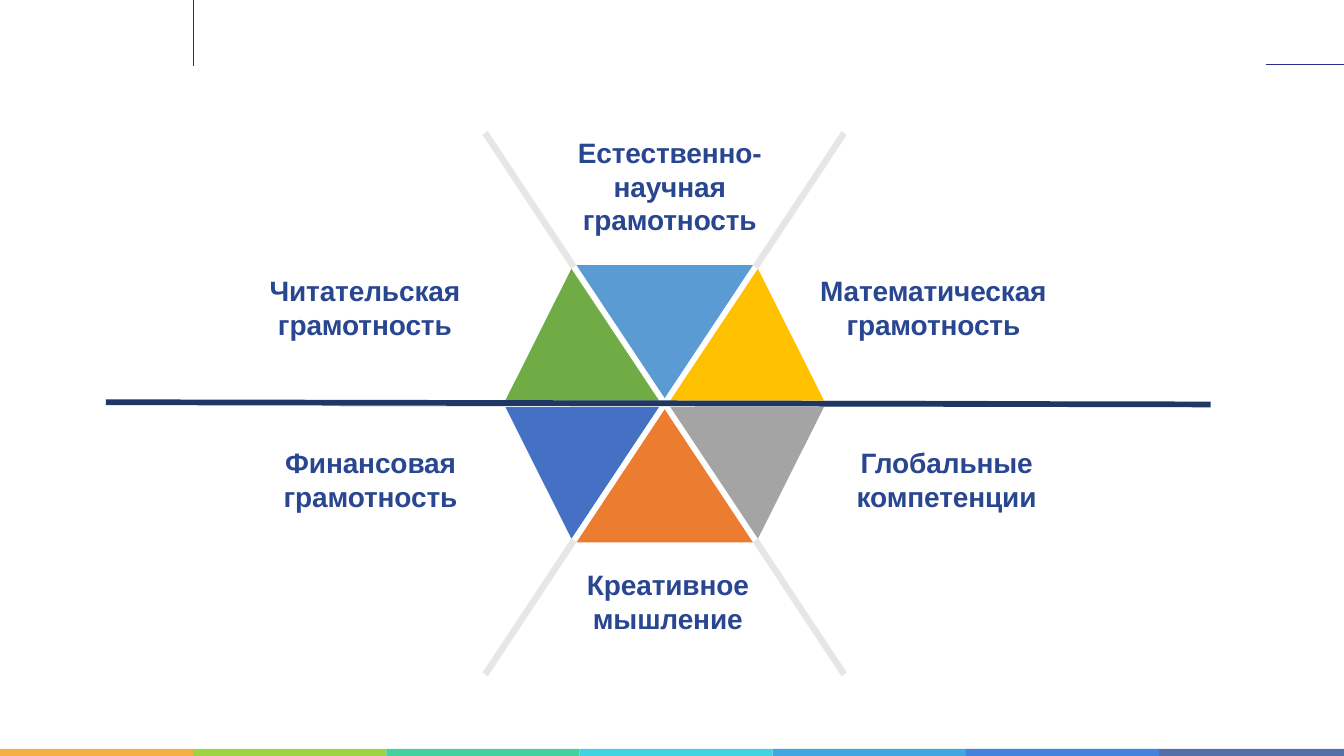
"""Slide with a six-part wheel of functional literacy skills."""
from dataclasses import dataclass

from lxml.etree import SubElement
from pptx import Presentation
from pptx.dml.color import RGBColor
from pptx.enum.shapes import MSO_CONNECTOR as Connector, MSO_SHAPE as Shape
from pptx.enum.text import MSO_AUTO_SIZE as AutoSize, PP_ALIGN as Align
from pptx.oxml.ns import qn
from pptx.util import Pt


@dataclass(frozen=True)
class Theme:
    font: str = "Arial"
    label_size: float = 20
    label: str = "294690"
    accent: str = "2C2B8D"
    axis: str = "1F3863"
    spokes: str = "E7E6E6"
    ribbon: tuple = ("F5B044", "9ED342", "43D1A0", "40D3E1", "40A7E0", "4383DD", "5370A9")


theme = Theme()
presentation = Presentation()
presentation.slide_width, presentation.slide_height = Pt(960), Pt(540)
slide = presentation.slides.add_slide(presentation.slide_layouts[6])
center_x, center_y = 474.8, 288.4


def add_outline(contours, color):
    """Draw closed contours, given as offsets from the wheel's center, as one filled shape."""
    placed = [[(Pt(center_x + x), Pt(center_y + y)) for x, y in contour] for contour in contours]
    builder = slide.shapes.build_freeform(*placed[0][0])
    for index, points in enumerate(placed):
        if index:
            builder.move_to(*points[0])
        builder.add_line_segments(points[1:], close=True)
    shape = builder.convert_to_shape()
    shape.shadow.inherit = False
    shape.fill.solid()
    shape.fill.fore_color.rgb = RGBColor.from_string(color)
    shape.line.fill.background()


def add_line(start_x, start_y, end_x, end_y, color, width):
    """Draw a straight line without a shadow."""
    line = slide.shapes.add_connector(Connector.STRAIGHT, Pt(start_x), Pt(start_y), Pt(end_x), Pt(end_y))
    line.line.color.rgb = RGBColor.from_string(color)
    line.line.width = Pt(width)
    SubElement(line._element.spPr, qn("a:effectLst"))


band_width = 138
for index, color in enumerate(theme.ribbon):
    left = index * band_width
    band = slide.shapes.add_shape(
        Shape.RECTANGLE, Pt(left), Pt(535), Pt(min(band_width, 960 - left)), Pt(5))
    band.shadow.inherit = False
    band.fill.solid()
    band.fill.fore_color.rgb = RGBColor.from_string(color)
    band.line.fill.background()

add_line(904, 46.1, 960, 46.1, theme.accent, 0.72)
add_line(138, 0, 138, 47.5, theme.accent, 0.72)

upright_triangle = [(0, 4), (-63, 99), (63, 99)]
side_triangle = [(66.6, 96.4), (4, 2.3), (113.8, 2.3)]
wheel = [
    (upright_triangle, 1, -1, "5B9BD4"),
    (upright_triangle, 1, 1, "EC7C30"),
    (side_triangle, -1, -1, "6FAC46"),
    (side_triangle, -1, 1, "4471C4"),
    (side_triangle, 1, -1, "FFC000"),
    (side_triangle, 1, 1, "A4A4A4"),
]
for triangle, flip_x, flip_y, color in wheel:
    add_outline([[(x * flip_x, y * flip_y) for x, y in triangle]], color)

labels = [
    (411.8, 95.8, 133.2, 74.2, ["Естественно-", "научная", "грамотность"]),
    (584.6, 194.4, 164.2, 49.7, ["Математическая", "грамотность"]),
    (610.6, 317.5, 131, 49.7, ["Глобальные компетенции"]),
    (418, 404.6, 118.1, 49.7, ["Креативное мышление"]),
    (201.6, 317.5, 126, 49.7, ["Финансовая грамотность"]),
    (191.5, 194.4, 138.2, 49.7, ["Читательская", "грамотность"]),
]
frame_format = {
    "margin_left": 0, "margin_right": 0, "margin_top": Pt(0.95), "margin_bottom": 0,
    "word_wrap": True, "auto_size": AutoSize.SHAPE_TO_FIT_TEXT,
}
font_format = {"name": theme.font, "size": Pt(theme.label_size), "bold": True}
for left, top, width, height, lines in labels:
    frame = slide.shapes.add_textbox(Pt(left), Pt(top), Pt(width), Pt(height)).text_frame
    for name, value in frame_format.items():
        setattr(frame, name, value)
    frame.text = "\n".join(lines)
    frame.paragraphs[0].space_before = Pt(0.9)
    for paragraph in frame.paragraphs:
        paragraph.alignment = Align.CENTER
        run = paragraph.runs[0]
        for name, value in font_format.items():
            setattr(run.font, name, value)
        run.font.color.rgb = RGBColor.from_string(theme.label)
        run._r.get_or_add_rPr().set("spc", "-10")

diagonal_spoke = [(63, 99), (126.4, 194.8), (130, 191.9), (66.6, 96.1)]
level_spoke = [(113.8, -2.3), (232, -2.3), (232, 2.3), (113.8, 2.3), (114.5, 0)]
spokes = [[(x * flip_x, y * flip_y) for x, y in diagonal_spoke]
          for flip_x in (-1, 1) for flip_y in (-1, 1)]
spokes += [[(x * flip_x, y) for x, y in level_spoke] for flip_x in (-1, 1)]
add_outline(spokes, theme.spokes)
add_line(75.6, 287.3, 864.7, 288.9, theme.axis, 4.08)

presentation.save("out.pptx")
